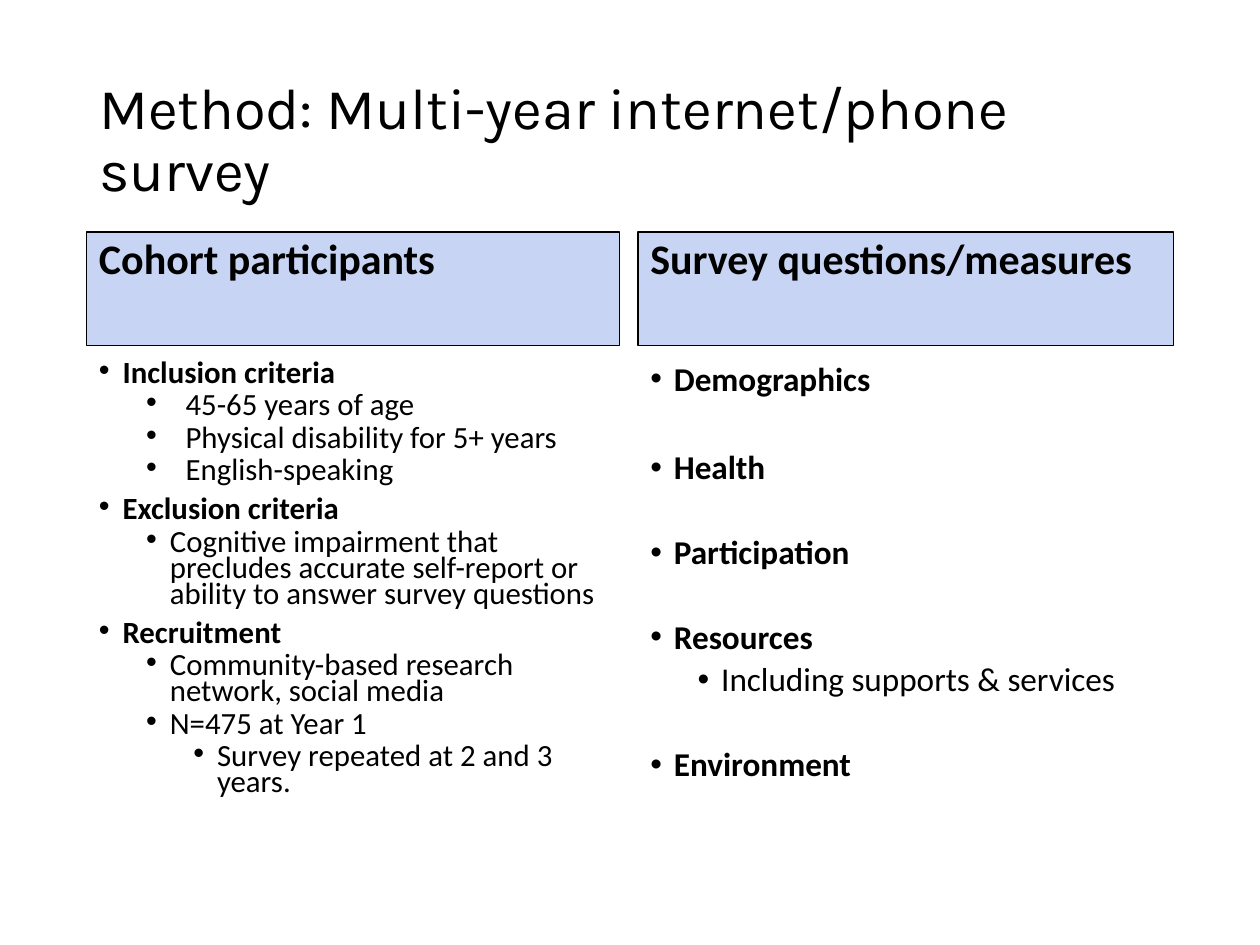
from lxml import etree
from pptx import Presentation
from pptx.dml.color import RGBColor
from pptx.enum import shapes, text
from pptx.oxml import ns
from pptx.util import Pt

BLACK = RGBColor(0x00, 0x00, 0x00)
PALE_BLUE = RGBColor(0xC7, 0xD4, 0xF4)

TITLE = "Method: Multi-year internet/phone survey"
# Each item: text, level, text indent, hanging indent, space before
COLUMNS = [
    {"heading": "Cohort participants", "left": 49.5, "width": 304.5,
     "size": 17.6, "line_spacing": 0.7,
     "items": [
         ("Inclusion criteria", 0, 13.5, 13.5, 0),
         ("45-65 years of age", 1, 49.5, 22.5, 3.8),
         ("Physical disability for 5+ years", 1, 49.5, 22.5, 3.8),
         ("English-speaking", 1, 49.5, 22.5, 3.8),
         ("Exclusion criteria", 0, 13.5, 13.5, 7.5),
         ("Cognitive impairment that precludes accurate self-report or "
          "ability to answer survey questions", 1, 40.5, 13.5, 3.8),
         ("Recruitment", 0, 13.5, 13.5, 7.5),
         ("Community-based research network, social media", 1, 40.5, 13.5, 3.8),
         ("N=475 at Year 1", 1, 40.5, 13.5, 3.8),
         ("Survey repeated at 2 and 3 years.", 2, 67.5, 13.5, 3.8),
     ]},
    {"heading": "Survey questions/measures", "left": 364.5, "width": 306,
     "size": 19, "line_spacing": 0.9,
     "items": [
         ("Demographics", 0, 13.5, 13.5, 0),
         ("Health", 0, 13.5, 13.5, 30),
         ("Participation", 0, 13.5, 13.5, 28),
         ("Resources", 0, 13.5, 13.5, 28),
         ("Including supports & services", 1, 40.5, 13.5, 3.8),
         ("Environment", 0, 13.5, 13.5, 28),
     ]},
]
HEADING_TOP, HEADING_HEIGHT = 132.5, 65
LIST_TOP, LIST_HEIGHT = 203.5, 290


def format_paragraph(paragraph, font_name, size, bold, line_spacing):
    paragraph.alignment = text.PP_ALIGN.LEFT
    paragraph.line_spacing = line_spacing
    for run in paragraph.runs:
        run.font.name = font_name
        run.font.size = Pt(size)
        run.font.bold = bold
        run.font.color.rgb = BLACK


def add_bullet(paragraph, indent, hanging):
    properties = paragraph._p.get_or_add_pPr()
    properties.set("marL", str(Pt(indent)))
    properties.set("indent", str(-Pt(hanging)))
    etree.SubElement(properties, ns.qn("a:buFont"), typeface="Arial")
    etree.SubElement(properties, ns.qn("a:buChar"), char="•")


def add_title(slide):
    title = slide.shapes.title
    title.left, title.top, title.width, title.height = Pt(49.5), Pt(29), Pt(621), Pt(104)
    frame = title.text_frame
    frame.text = TITLE
    frame.word_wrap = True
    frame.auto_size = text.MSO_AUTO_SIZE.NONE
    frame.vertical_anchor = text.MSO_ANCHOR.MIDDLE
    format_paragraph(frame.paragraphs[0], "Karla", 33, False, 0.9)


def add_heading(slide, column):
    heading = slide.shapes.add_shape(
        shapes.MSO_SHAPE.RECTANGLE, Pt(column["left"]), Pt(HEADING_TOP),
        Pt(column["width"]), Pt(HEADING_HEIGHT))
    heading.shadow.inherit = False
    heading.fill.solid()
    heading.fill.fore_color.rgb = PALE_BLUE
    heading.line.color.rgb = BLACK
    heading.line.width = Pt(0.75)
    frame = heading.text_frame
    frame.text = column["heading"]
    frame.word_wrap = True
    frame.vertical_anchor = text.MSO_ANCHOR.TOP
    format_paragraph(frame.paragraphs[0], "Calibri", 24, True, 0.9)


def add_list(slide, column):
    box = slide.shapes.add_textbox(
        Pt(column["left"]), Pt(LIST_TOP), Pt(column["width"]), Pt(LIST_HEIGHT))
    frame = box.text_frame
    frame.word_wrap = True
    for index, (item, level, indent, hanging, space) in enumerate(column["items"]):
        paragraph = frame.add_paragraph() if index else frame.paragraphs[0]
        paragraph.text = item
        paragraph.level = level
        add_bullet(paragraph, indent, hanging)
        paragraph.space_before = Pt(space)
        format_paragraph(paragraph, "Calibri", column["size"], level == 0,
                         column["line_spacing"])


def main():
    presentation = Presentation()
    presentation.slide_width, presentation.slide_height = Pt(720), Pt(540)
    slide = presentation.slides.add_slide(presentation.slide_layouts[5])
    add_title(slide)
    for column in COLUMNS:
        add_heading(slide, column)
        add_list(slide, column)
    presentation.save("out.pptx")


if __name__ == "__main__":
    main()
